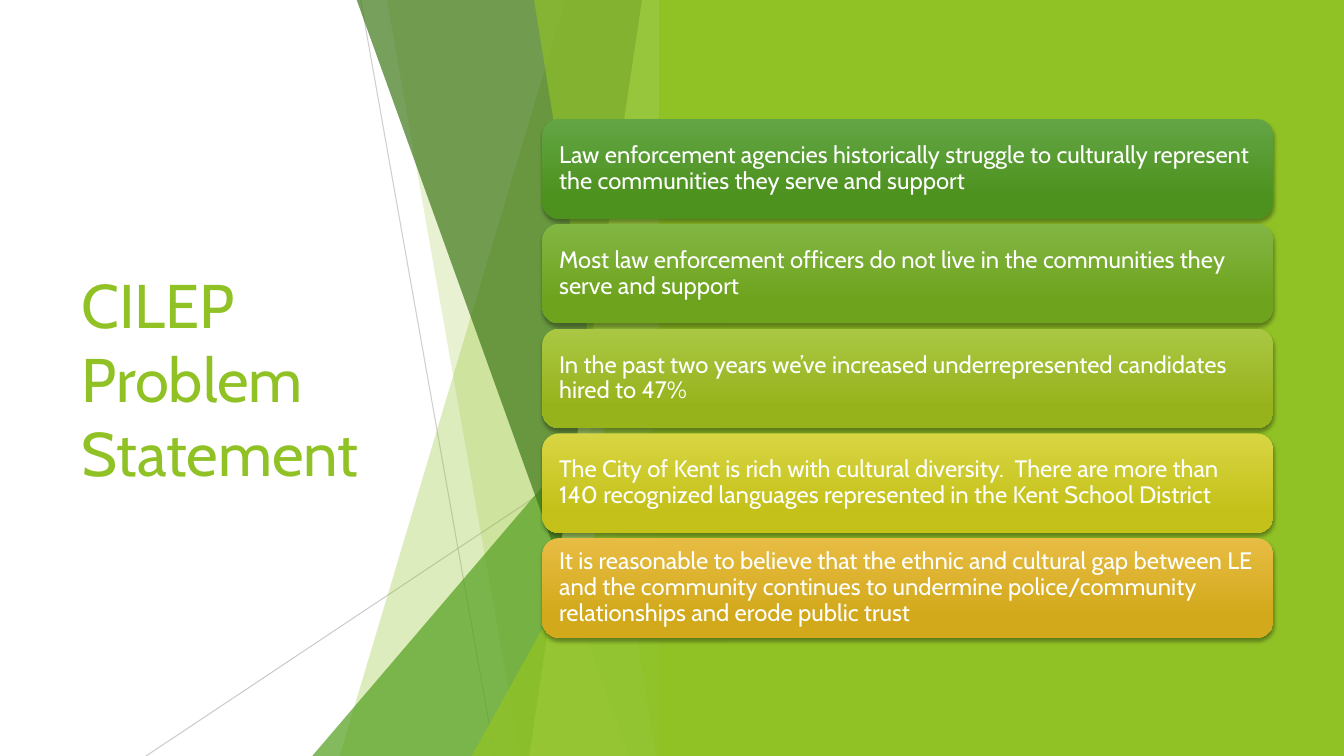
"""Build the CILEP problem statement slide with faceted artwork and five bars."""
from lxml import etree
from pptx import Presentation
from pptx import util as u
from pptx.dml.color import RGBColor
from pptx.enum import shapes, text
from pptx.oxml.ns import qn

TITLE = "CILEP Problem Statement"
BARS = [
    ("Law enforcement agencies historically struggle to culturally represent "
     "the communities they serve and support", "63A545", "4D921E"),
    ("Most law enforcement officers do not live in the communities they "
     "serve and support", "82B644", "6EA31D"),
    ("In the past two years we’ve increased underrepresented candidates "
     "hired to 47%", "AAC744", "97B31C"),
    ("The City of Kent is rich with cultural diversity.  There are more than "
     "140 recognized languages represented in the Kent School District",
     "D8D543", "C4C11A"),
    ("It is reasonable to believe that the ethnic and cultural gap between LE "
     "and the community continues to undermine police/community "
     "relationships and erode public trust", "E7BC43", "D2A91B"),
]
THEME = {"font": "Cabin", "title": 44, "body": 17, "lime": "90C226",
         "green": "54A021", "dark": "3F7819", "pale": "C0E474",
         "grey": "BFBFBF", "white": "FFFFFF", "black": "000000"}
WIDE, HIGH = 33.87, 19.05
EDGE = 16.92
PANEL = 16.61
RAYS = [((9.09, 0), (12.47, HIGH), 75), ((EDGE, 10.24), (3.68, HIGH), 80)]
FACETS = [
    ("band", 14.25, 8.56, "lime", 30),
    ("band", 9.75, 13.11, "lime", 20),
    ("peak", 7.87, 8.46, "green", 72),
    ("band", 8.99, 15.85, "dark", 70),
    ("band", 16.18, 13.34, "pale", 70),
    ("band", 13.46, 16.54, "lime", 65),
    ("peak", 11.89, 9.98, "lime", 80),
]
BOX = {"left": 13.67, "top": 3.0, "wide": 18.42, "high": 2.51, "step": 2.64}


def cms(*sizes):
    return [u.Cm(size) for size in sizes]


def color(code):
    return RGBColor.from_string(THEME.get(code, code))


def fade(shape, alpha):
    node = shape.element.spPr.find(".//" + qn("a:srgbClr"))
    etree.SubElement(node, qn("a:alpha"), val=str(alpha * 1000))


def plain(shape, code):
    shape.shadow.inherit = False
    shape.line.fill.background()
    shape.fill.solid()
    shape.fill.fore_color.rgb = color(code)


def write(frame, words, size, code):
    frame.word_wrap = True
    frame.vertical_anchor = text.MSO_ANCHOR.MIDDLE
    para = frame.paragraphs[0]
    para.alignment = text.PP_ALIGN.LEFT
    run = para.add_run()
    run.text = words
    run.font.name = THEME["font"]
    run.font.size = u.Pt(THEME[size])
    run.font.color.rgb = color(code)
    return para


def add_ray(tree, start, end, alpha):
    ray = tree.add_connector(shapes.MSO_CONNECTOR.STRAIGHT, *cms(*start, *end))
    ray.line.color.rgb = color("grey")
    ray.line.width = u.Pt(0.75)
    fade(ray, alpha)
    etree.SubElement(ray.element.spPr, qn("a:effectLst"))


def add_facet(tree, kind, first, second, code, alpha):
    if kind == "peak":
        facet = tree.add_shape(shapes.MSO_SHAPE.ISOSCELES_TRIANGLE,
                               *cms(first, second, EDGE - first, HIGH - second))
        facet.adjustments[0] = 1
    else:
        pen = tree.build_freeform(*cms(first, 0))
        pen.add_line_segments([cms(EDGE, 0), cms(EDGE, HIGH), cms(second, HIGH)])
        facet = pen.convert_to_shape()
    plain(facet, code)
    fade(facet, alpha)


def add_bar(tree, row, words, light, deep):
    top = BOX["top"] + row * BOX["step"]
    bar = tree.add_shape(shapes.MSO_SHAPE.ROUNDED_RECTANGLE,
                         *cms(BOX["left"], top, BOX["wide"], BOX["high"]))
    bar.line.fill.background()
    bar.fill.gradient()
    bar.fill.gradient_angle = 270
    for stop, place, code in zip(bar.fill.gradient_stops, (0, 0.78), (light, deep)):
        stop.position = place
        stop.color.rgb = color(code)
    bar.shadow.inherit = False
    glow = etree.SubElement(
        bar.element.spPr.find(qn("a:effectLst")), qn("a:outerShdw"),
        blurRad=str(u.Pt(3)), dist=str(u.Pt(2)), dir="5400000", rotWithShape="0")
    shade = etree.SubElement(glow, qn("a:srgbClr"), val=THEME["black"])
    etree.SubElement(shade, qn("a:alpha"), val="35000")
    frame = bar.text_frame
    frame.margin_left = frame.margin_right = u.Cm(0.3)
    frame.margin_top = frame.margin_bottom = u.Cm(0.3)
    write(frame, words, "body", "white").line_spacing = 0.9


def main():
    deck = Presentation()
    deck.slide_width, deck.slide_height = cms(WIDE, HIGH)
    tree = deck.slides.add_slide(deck.slide_layouts[6]).shapes
    title = tree.add_textbox(*cms(1.8, 3.84, 9.86, 11.38))
    write(title.text_frame, TITLE, "title", "lime")
    for ray in RAYS:
        add_ray(tree, *ray)
    for facet in FACETS:
        add_facet(tree, *facet)
    panel = tree.add_shape(shapes.MSO_SHAPE.RECTANGLE,
                           *cms(PANEL, 0, WIDE - PANEL, HIGH))
    plain(panel, "lime")
    for row, bar in enumerate(BARS):
        add_bar(tree, row, *bar)
    deck.save("out.pptx")


if __name__ == "__main__":
    main()
